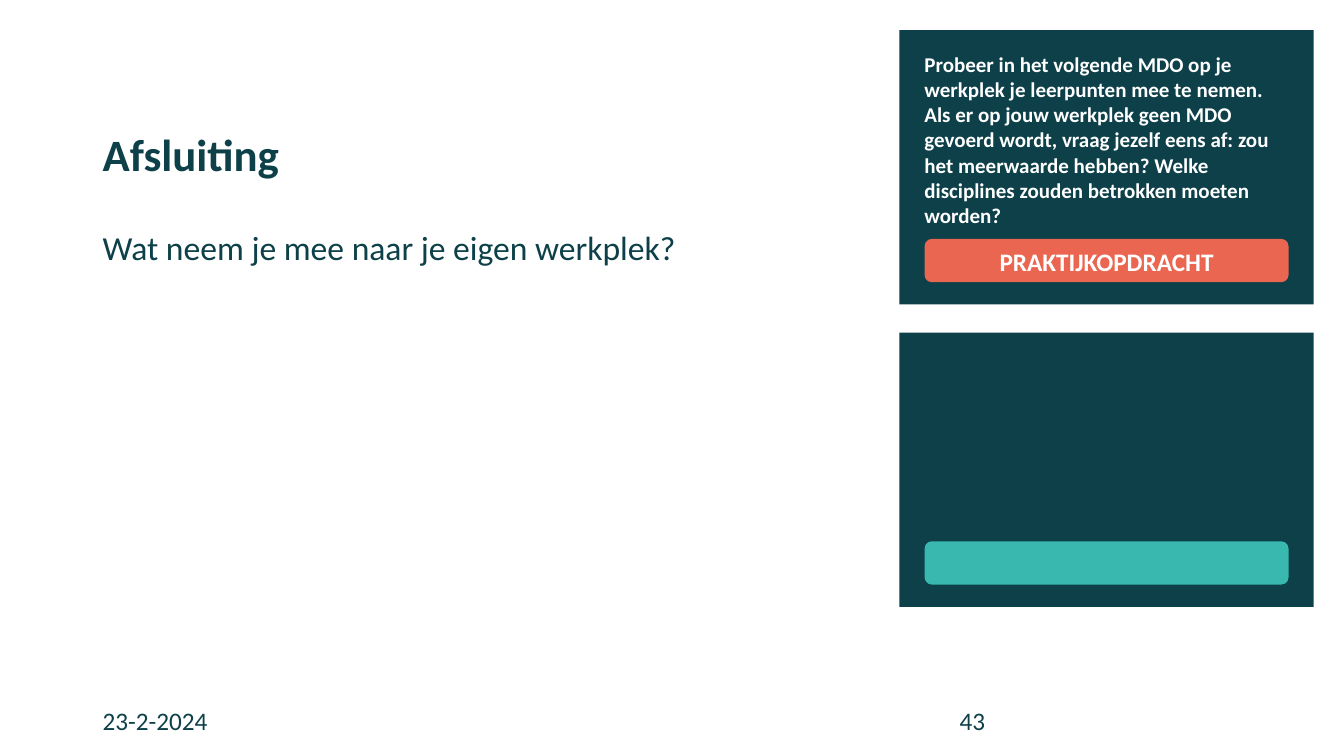
from pptx import Presentation
from pptx.dml.color import RGBColor
from pptx.enum.shapes import MSO_SHAPE
from pptx.enum.text import MSO_ANCHOR, PP_ALIGN
from pptx.util import Inches, Pt

RECTANGLE = MSO_SHAPE.RECTANGLE
ROUNDED = MSO_SHAPE.ROUNDED_RECTANGLE
TOP = MSO_ANCHOR.TOP
BOTTOM = MSO_ANCHOR.BOTTOM
LEFT = PP_ALIGN.LEFT
CENTER = PP_ALIGN.CENTER

FONT = "Calibri"
PETROL = "0D4049"
TEAL = "38B8AF"
CORAL = "EB6650"
WHITE = "FFFFFF"

MARGIN = 0.92
FOOTER_TOP = 6.95
CARD_LEFT = 8.92
CARD_TOP = 0.3
CARD_STEP = 3
BUTTON_LEFT = CARD_LEFT + 0.25
BUTTON_OFFSET = 2.07
BUTTON_WIDTH = 3.61
BUTTON_HEIGHT = 0.43

ASSIGNMENT = (
    "Probeer in het volgende MDO op je werkplek je leerpunten mee te nemen. "
    "Als er op jouw werkplek geen MDO gevoerd wordt, vraag jezelf eens af: "
    "zou het meerwaarde hebben? Welke disciplines zouden betrokken moeten worden?"
)


def color(value):
    """Return the colour for a hex string."""
    return RGBColor.from_string(value)


def add_box(slide, kind, left, top, width, height, fill):
    """Add a filled shape without outline or shadow."""
    shape = slide.shapes.add_shape(
        kind, Inches(left), Inches(top), Inches(width), Inches(height))
    shape.shadow.inherit = False
    shape.fill.solid()
    shape.fill.fore_color.rgb = color(fill)
    shape.line.fill.background()


def add_text(slide, text, left, top, width, height, *, size=18, fill=PETROL,
             bold=False, align=LEFT, anchor=TOP, spacing=1.0):
    """Add a wrapped text box with one paragraph."""
    box = slide.shapes.add_textbox(
        Inches(left), Inches(top), Inches(width), Inches(height))
    frame = box.text_frame
    frame.word_wrap = True
    frame.vertical_anchor = anchor
    paragraph = frame.paragraphs[0]
    paragraph.alignment = align
    paragraph.line_spacing = spacing
    run = paragraph.add_run()
    run.text = text
    run.font.name = FONT
    run.font.size = Pt(size)
    run.font.bold = bold
    run.font.color.rgb = color(fill)


def add_card(slide, top, button_fill):
    """Add a dark card with a rounded button near its bottom."""
    add_box(slide, RECTANGLE, CARD_LEFT, top, 4.11, 2.72, PETROL)
    add_box(slide, ROUNDED, BUTTON_LEFT, top + BUTTON_OFFSET,
            BUTTON_WIDTH, BUTTON_HEIGHT, button_fill)


def main():
    """Build the closing slide and save it."""
    presentation = Presentation()
    presentation.slide_width = Inches(13.33)
    presentation.slide_height = Inches(7.5)
    slide = presentation.slides.add_slide(presentation.slide_layouts[6])

    add_text(slide, "Afsluiting", MARGIN, 0.4, 5.42, 1.45,
             size=32, bold=True, anchor=BOTTOM, spacing=0.9)
    add_text(slide, "Wat neem je mee naar je eigen werkplek?",
             MARGIN, 2.25, 6, 4.17, size=24, spacing=0.9)

    for index, button_fill in enumerate((CORAL, TEAL)):
        add_card(slide, CARD_TOP + index * CARD_STEP, button_fill)
    add_text(slide, "PRAKTIJKOPDRACHT", BUTTON_LEFT, CARD_TOP + BUTTON_OFFSET,
             BUTTON_WIDTH, BUTTON_HEIGHT, fill=WHITE, bold=True,
             align=CENTER, anchor=BOTTOM, spacing=0.9)
    add_text(slide, ASSIGNMENT, 9.07, 0.46, 3.84, 1.87,
             size=15, fill=WHITE, bold=True)

    add_text(slide, "23-2-2024", MARGIN, FOOTER_TOP, 3, 0.4)
    add_text(slide, "43", 9.42, FOOTER_TOP, 0.79, 0.4)
    presentation.save("out.pptx")


if __name__ == "__main__":
    main()
